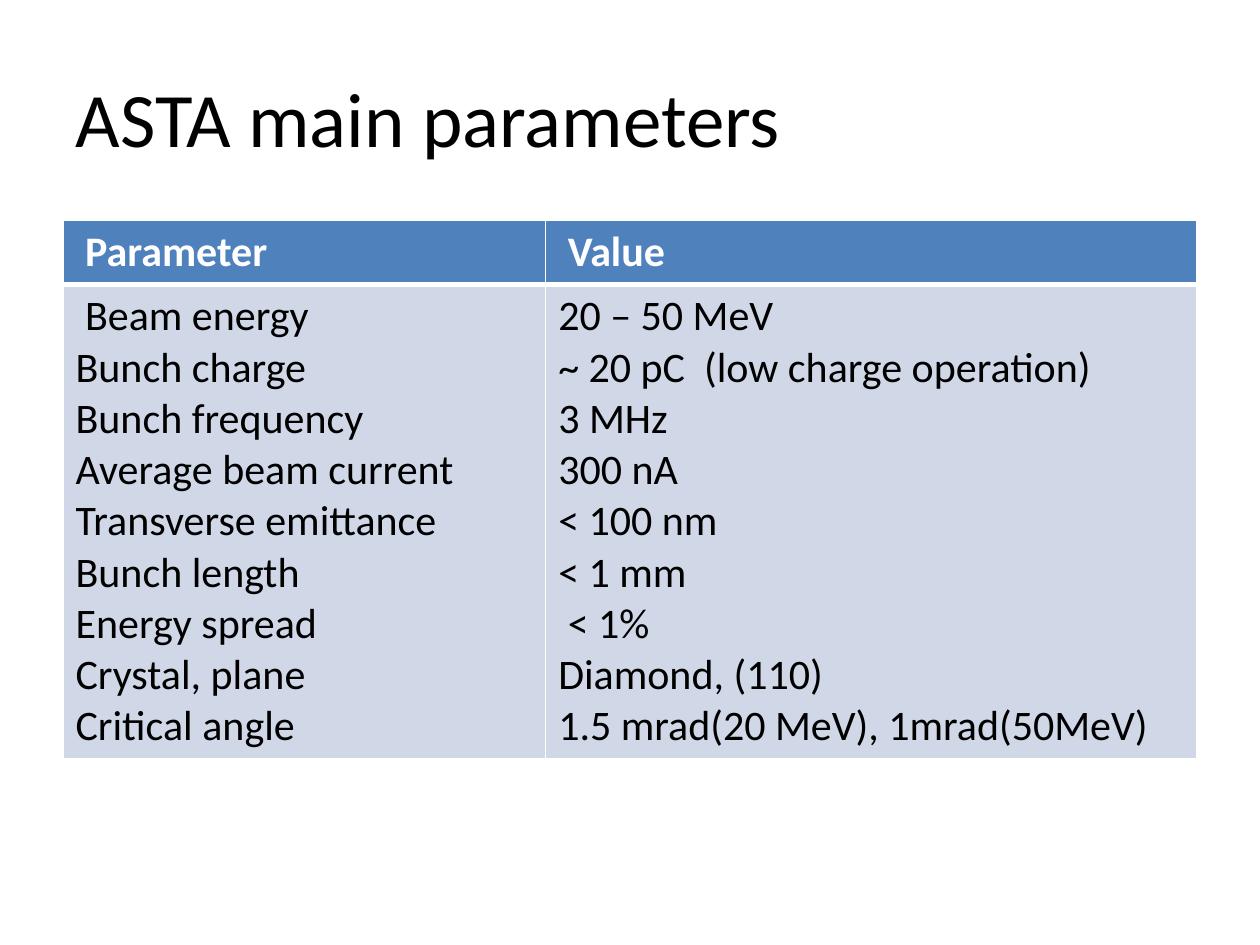
from dataclasses import dataclass

from lxml.etree import SubElement
from pptx import Presentation
from pptx.dml.color import RGBColor
from pptx.enum.text import MSO_ANCHOR, PP_ALIGN
from pptx.oxml.ns import qn
from pptx.util import Cm, Pt


@dataclass(frozen=True)
class Theme:
    font: str = "Calibri"
    text: str = "000000"
    light: str = "FFFFFF"
    header: str = "4F81BD"
    body: str = "D0D8E8"
    title_size: int = 44
    table_size: int = 24
    thin_line: int = 1
    thick_line: int = 3


@dataclass(frozen=True)
class Box:
    left: float
    top: float
    width: float
    height: float

    def lengths(self):
        return Cm(self.left), Cm(self.top), Cm(self.width), Cm(self.height)


THEME = Theme()
PARAMETERS = [
    (" Beam energy", "20 – 50 MeV"),
    ("Bunch charge", "~ 20 pC  (low charge operation)"),
    ("Bunch frequency", "3 MHz"),
    ("Average beam current", "300 nA"),
    ("Transverse emittance", "< 100 nm"),
    ("Bunch length", "< 1 mm"),
    ("Energy spread", " < 1%"),
    ("Crystal, plane", "Diamond, (110)"),
    ("Critical angle", "1.5 mrad(20 MeV), 1mrad(50MeV)"),
]


def write_text(text_frame, text, size, color=THEME.text, bold=False):
    text_frame.text = text
    for paragraph in text_frame.paragraphs:
        paragraph.alignment = PP_ALIGN.LEFT
        for run in paragraph.runs:
            run.font.name = THEME.font
            run.font.size = Pt(size)
            run.font.bold = bold
            run.font.color.rgb = RGBColor.from_string(color)


def set_borders(cell, **widths):
    properties = cell._tc.get_or_add_tcPr()
    for side in "LRTB":
        width = widths.get(side, THEME.thin_line)
        line = SubElement(properties, qn(f"a:ln{side}"), w=str(Pt(width)))
        fill = SubElement(line, qn("a:solidFill"))
        SubElement(fill, qn("a:srgbClr"), val=THEME.light)


def format_cell(cell, text, fill, borders, **text_format):
    set_borders(cell, **borders)
    cell.fill.solid()
    cell.fill.fore_color.rgb = RGBColor.from_string(fill)
    write_text(cell.text_frame, text, THEME.table_size, **text_format)


def place_title(slide, box, text):
    title = slide.shapes.title
    title.left, title.top, title.width, title.height = box.lengths()
    title.text_frame.vertical_anchor = MSO_ANCHOR.MIDDLE
    write_text(title.text_frame, text, THEME.title_size)


def place_parameter_table(slide, box, headings, parameters):
    table = slide.shapes.add_table(2, 2, *box.lengths()).table
    name_width, header_height = 9.73, 1.27
    table.columns[0].width = Cm(name_width)
    table.columns[1].width = Cm(box.width - name_width)
    table.rows[0].height = Cm(header_height)
    table.rows[1].height = Cm(box.height - header_height)
    for column, (heading, entries) in enumerate(zip(headings, zip(*parameters))):
        format_cell(table.cell(0, column), heading, THEME.header,
                    {"B": THEME.thick_line}, color=THEME.light, bold=True)
        format_cell(table.cell(1, column), "\n".join(entries), THEME.body,
                    {"T": THEME.thick_line})


def main():
    presentation = Presentation()
    presentation.slide_width, presentation.slide_height = Cm(25.4), Cm(19.05)
    slide = presentation.slides.add_slide(presentation.slide_layouts[5])
    place_title(slide, Box(1.27, 0.76, 22.86, 3.18), "ASTA main parameters")
    place_parameter_table(slide, Box(1.27, 4.45, 22.86, 10.8),
                          (" Parameter", " Value"), PARAMETERS)
    presentation.save("out.pptx")


if __name__ == "__main__":
    main()
